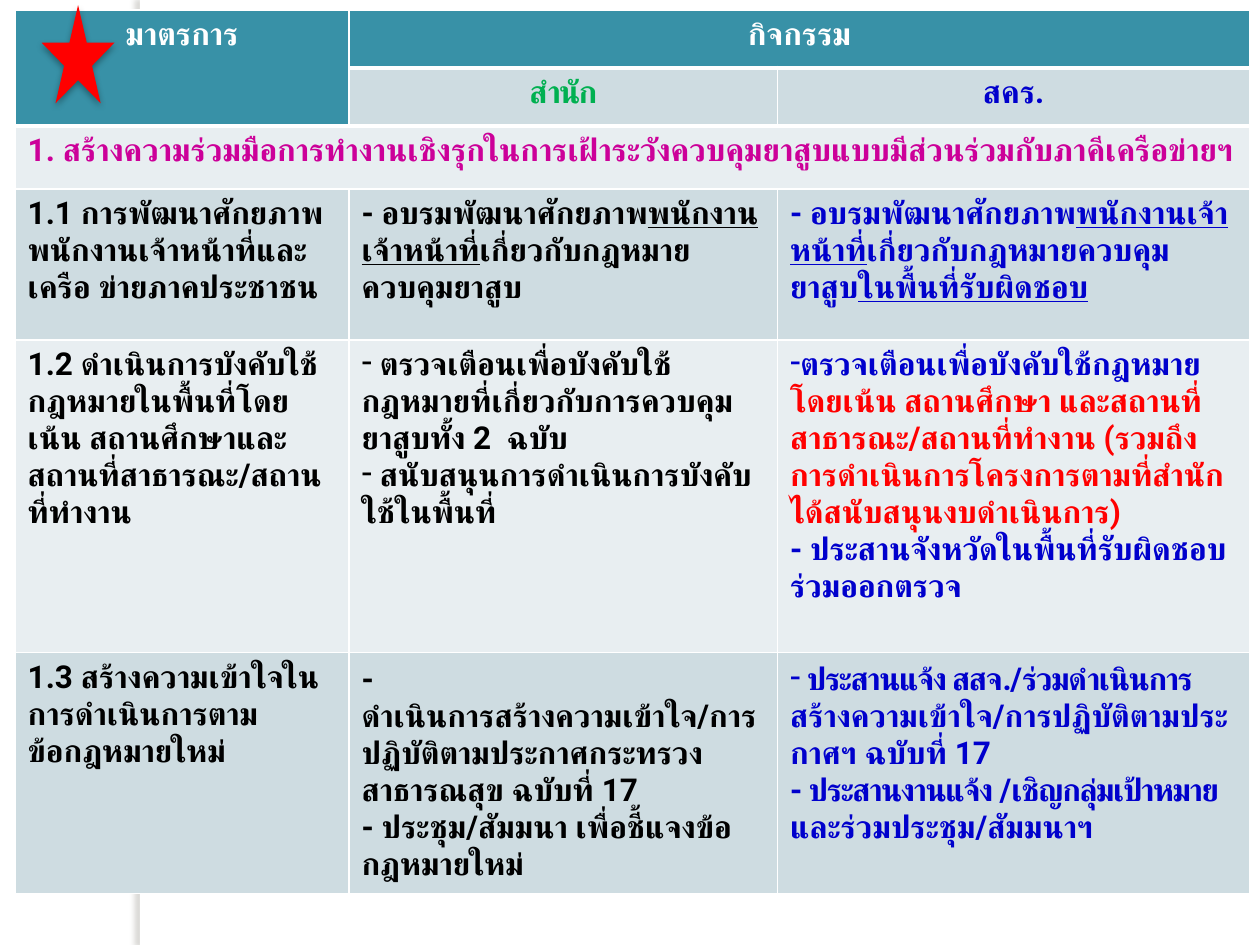
from dataclasses import dataclass, field

from lxml import etree
from pptx import Presentation
from pptx.dml.color import RGBColor
from pptx.enum.shapes import MSO_SHAPE
from pptx.enum.text import PP_ALIGN
from pptx.oxml.ns import qn
from pptx.util import Pt

PX = 9144  # 100 px to the inch
FONT = "Roboto"
RECT, STAR = MSO_SHAPE.RECTANGLE, MSO_SHAPE.STAR_5_POINT
LEFT, CENTER = PP_ALIGN.LEFT, PP_ALIGN.CENTER

WHITE = RGBColor(0xFF, 0xFF, 0xFF)
BLACK = RGBColor(0x00, 0x00, 0x00)
GREY = RGBColor(0x73, 0x6F, 0x63)
TEAL = RGBColor(0x38, 0x91, 0xA7)
DARK_BAND = RGBColor(0xCE, 0xDC, 0xE1)
LIGHT_BAND = RGBColor(0xE8, 0xEE, 0xF1)
GREEN = RGBColor(0x00, 0xB0, 0x50)
BLUE = RGBColor(0x00, 0x00, 0xCC)
MAGENTA = RGBColor(0xCC, 0x00, 0x99)
RED = RGBColor(0xFF, 0x00, 0x00)

COLS = (265, 340, 375)
ROWS = (46, 46, 50, 120, 248, 191)


@dataclass
class Run:
    text: str
    color: RGBColor = BLACK
    underline: bool = False
    spacing: float = 0


@dataclass
class Para:
    runs: list[Run]
    dash: bool = False
    align: PP_ALIGN = LEFT


@dataclass
class Cell:
    row: int
    col: int
    fill: RGBColor
    paras: list[Para]
    span: tuple[int, int] = (1, 1)
    inset: int = 5


@dataclass
class Shadow:
    color: RGBColor
    alpha: int
    blur: int
    distance: int
    angle: int


@dataclass
class Figure:
    kind: MSO_SHAPE
    box: tuple[int, int, int, int]
    fill: RGBColor
    shadow: Shadow = field(kw_only=True)


def heading(text: str, color: RGBColor, spacing: float = 0) -> list[Para]:
    return [Para([Run(text, color, spacing=spacing)], align=CENTER)]


def plain(*texts: str, color: RGBColor = BLACK, dash: bool = False) -> list[Para]:
    return [Para([Run(text, color)], dash) for text in texts]


def training(color: RGBColor) -> list[Run]:
    return [Run("- อบรมพัฒนาศักยภาพ", color),
            Run("พนักงานเจ้าหน้าที่", color, True),
            Run("เกี่ยวกับกฎหมายควบคุมยาสูบ", color)]


CELLS = [
    Cell(0, 0, TEAL, heading("มาตรการ", WHITE), (2, 1)),
    Cell(0, 1, TEAL, heading("กิจกรรม", WHITE), (1, 2)),
    Cell(1, 1, DARK_BAND, heading("สำนัก", GREEN, -1)),
    Cell(1, 2, DARK_BAND, heading("สคร.", BLUE)),
    Cell(2, 0, LIGHT_BAND, plain(
        "1. สร้างความร่วมมือการทำงานเชิงรุกในการเฝ้าระวังควบคุมยาสูบแบบมีส่วนร่วมกับภาคีเครือข่ายฯ",
        color=MAGENTA), (1, 3)),
    Cell(3, 0, DARK_BAND, plain("1.1 การพัฒนาศักยภาพพนักงานเจ้าหน้าที่และเครือ ข่ายภาคประชาชน")),
    Cell(3, 1, DARK_BAND, [Para(training(BLACK))]),
    Cell(3, 2, DARK_BAND, [Para([*training(BLUE), Run("ในพื้นที่รับผิดชอบ", BLUE, True)])]),
    Cell(4, 0, LIGHT_BAND, plain(
        "1.2 ดำเนินการบังคับใช้กฎหมายในพื้นที่โดยเน้น สถานศึกษาและสถานที่สาธารณะ/สถานที่ทำงาน")),
    Cell(4, 1, LIGHT_BAND, plain(
        " ตรวจเตือนเพื่อบังคับใช้กฎหมายที่เกี่ยวกับการควบคุมยาสูบทั้ง 2  ฉบับ",
        " สนับสนุนการดำเนินการบังคับใช้ในพื้นที่", dash=True)),
    Cell(4, 2, LIGHT_BAND, [
        Para([Run("ตรวจเตือนเพื่อบังคับใช้กฎหมาย ", BLUE),
              Run("โดยเน้น สถานศึกษา และสถานที่สาธารณะ/สถานที่ทำงาน "
                  "(รวมถึงการดำเนินการโครงการตามที่สำนักได้สนับสนุนงบดำเนินการ)", RED)], True),
        *plain("- ประสานจังหวัดในพื้นที่รับผิดชอบร่วมออกตรวจ", color=BLUE)]),
    Cell(5, 0, DARK_BAND, plain("1.3 สร้างความเข้าใจในการดำเนินการตาม", "ข้อกฎหมายใหม่")),
    Cell(5, 1, DARK_BAND, plain(
        "- ดำเนินการสร้างความเข้าใจ/การปฏิบัติตามประกาศกระทรวงสาธารณสุข ฉบับที่ 17",
        "- ประชุม/สัมมนา เพื่อชี้แจงข้อกฎหมายใหม่"), inset=7),
    Cell(5, 2, DARK_BAND, [
        Para([Run(" ประสานแจ้ง สสจ./ร่วมดำเนินการ", BLUE, spacing=-0.8),
              Run("สร้างความเข้าใจ/การปฏิบัติตามประกาศฯ ฉบับที่ 17", BLUE)], True),
        Para([Run("- ประสานงานแจ้ง /เชิญกลุ่มเป้าหมาย ", BLUE, spacing=-0.8),
              Run("และร่วมประชุม/สัมมนาฯ", BLUE)])], inset=7),
]

STRIPE = Figure(RECT, (111, 0, 8, 750), WHITE, shadow=Shadow(GREY, 25, 3, 3, 180))
RED_STAR = Figure(STAR, (33, 4, 58, 78), RED, shadow=Shadow(BLACK, 35, 4, 2, 90))


def add_figure(s, figure: Figure) -> None:
    sp = s.shapes.add_shape(figure.kind, *(v * PX for v in figure.box))
    sp.fill.solid()
    sp.fill.fore_color.rgb = figure.fill
    sp.line.fill.background()
    sp.shadow.inherit = False
    shadow = figure.shadow
    effects = sp._element.spPr.find(qn("a:effectLst"))
    outer = etree.SubElement(effects, qn("a:outerShdw"), blurRad=str(Pt(shadow.blur)),
                             dist=str(Pt(shadow.distance)), dir=str(shadow.angle * 60000),
                             algn="ctr", rotWithShape="0")
    color = etree.SubElement(outer, qn("a:srgbClr"), val=str(shadow.color))
    etree.SubElement(color, qn("a:alpha"), val=str(shadow.alpha * 1000))


def add_borders(cell, bottom: int) -> None:
    tcPr = cell._tc.get_or_add_tcPr()
    for side, width in {"L": 1, "R": 1, "T": 1, "B": bottom}.items():
        ln = etree.SubElement(tcPr, qn(f"a:ln{side}"), w=str(Pt(width)))
        fill = etree.SubElement(ln, qn("a:solidFill"))
        etree.SubElement(fill, qn("a:srgbClr"), val=str(WHITE))


def add_run(p, run: Run) -> None:
    r = p.add_run()
    r.text = run.text
    style = {"name": FONT, "size": Pt(18), "bold": True, "underline": run.underline}
    for name, value in style.items():
        setattr(r.font, name, value)
    r.font.color.rgb = run.color
    rPr = r._r.get_or_add_rPr()
    rPr.set("lang", "th-TH")
    rPr.set("spc", str(round(run.spacing * 100)))
    etree.SubElement(rPr, qn("a:cs"), typeface=FONT)  # font of the Thai script


def fill_cell(table, spec_cell: Cell) -> None:
    cell = table.cell(spec_cell.row, spec_cell.col)
    rows, cols = spec_cell.span
    if rows * cols > 1:
        cell.merge(table.cell(spec_cell.row + rows - 1, spec_cell.col + cols - 1))
    cell.fill.solid()
    cell.fill.fore_color.rgb = spec_cell.fill
    cell.margin_left = cell.margin_right = 10 * PX
    cell.margin_top = cell.margin_bottom = spec_cell.inset * PX
    tf = cell.text_frame
    for i, para in enumerate(spec_cell.paras):
        p = tf.add_paragraph() if i else tf.paragraphs[0]
        p.alignment = para.align
        if para.dash:
            etree.SubElement(p._p.get_or_add_pPr(), qn("a:buChar"), char="-")
        for run in para.runs:
            add_run(p, run)


def add_measures_table(s) -> None:
    table = s.shapes.add_table(len(ROWS), len(COLS), 12 * PX, 8 * PX,
                               sum(COLS) * PX, sum(ROWS) * PX).table
    table.first_row = table.horz_banding = False
    for column, width in zip(table.columns, COLS):
        column.width = width * PX
    for row, height in zip(table.rows, ROWS):
        row.height = height * PX
    for r in range(len(ROWS)):
        for c in range(len(COLS)):
            add_borders(table.cell(r, c), 3 if r == 0 or (r, c) == (1, 0) else 1)
    for cell in CELLS:
        fill_cell(table, cell)


def main() -> None:
    prs = Presentation()
    prs.slide_width, prs.slide_height = 1000 * PX, 750 * PX
    s = prs.slides.add_slide(prs.slide_layouts[6])
    add_figure(s, STRIPE)
    add_measures_table(s)
    add_figure(s, RED_STAR)
    prs.save("out.pptx")


if __name__ == "__main__":
    main()
